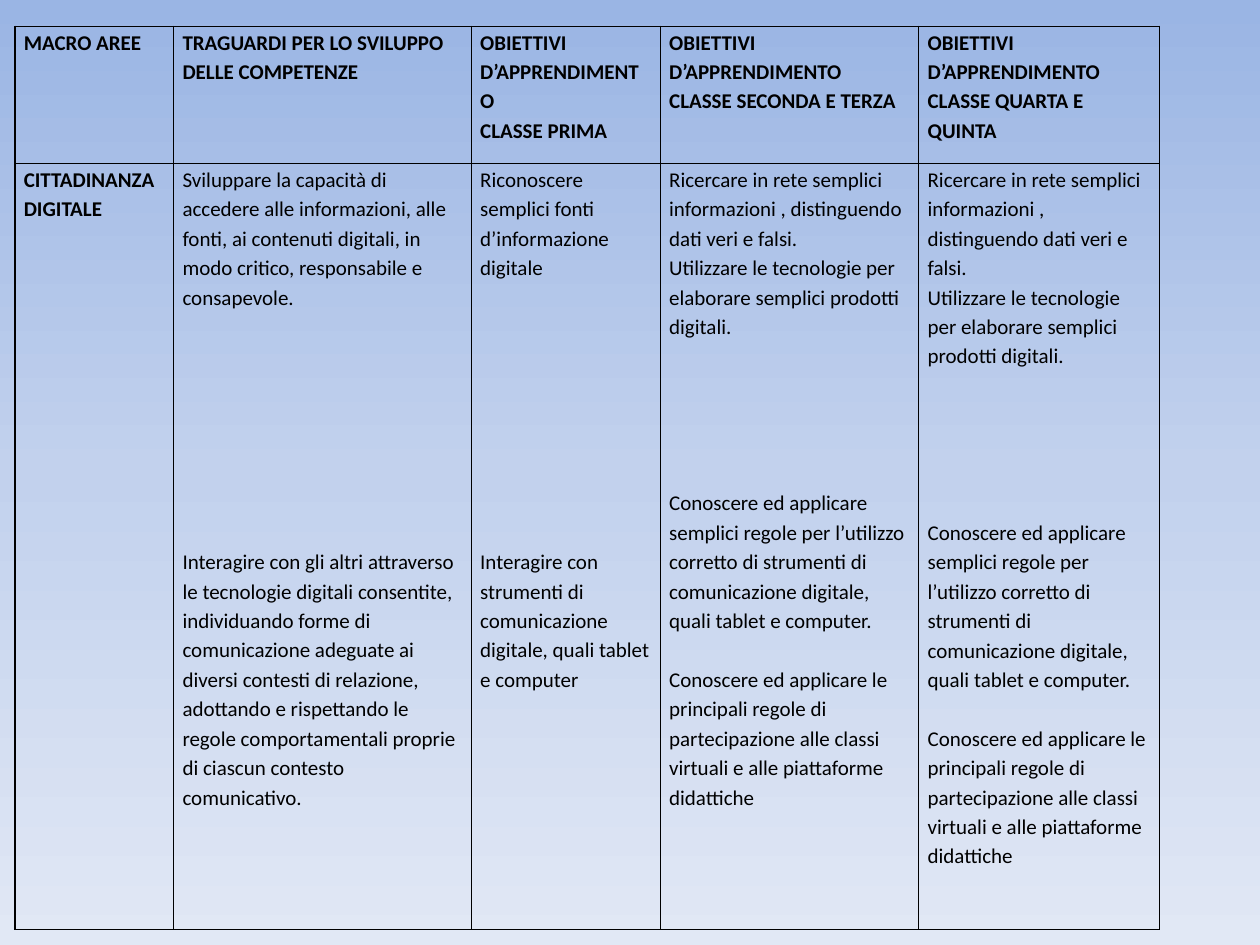
from copy import deepcopy

from lxml.etree import SubElement
from pptx import Presentation
from pptx.dml.color import RGBColor as RGB
from pptx.oxml.ns import qn
from pptx.util import Cm, Pt

BLACK = RGB(0x00, 0x00, 0x00)
GRADIENT = [
    (0, RGB(0x9A, 0xB5, 0xE4)),
    (0.5, RGB(0xC2, 0xD1, 0xED)),
    (1, RGB(0xE1, 0xE8, 0xF5)),
]
LINE = 16.8
COLS = [3.2, 6, 3.81, 5.21, 4.85]
ROWS = [2.77, 15.44]
MARGINS = {
    "margin_left": Cm(0.18),
    "margin_right": Cm(0.18),
    "margin_top": 0,
    "margin_bottom": 0,
}
FONT = {"name": "Calibri", "size": Pt(12)}

GOALS = "OBIETTIVI D’APPRENDIMENTO"
UPPER_CLASSES = [
    (0, "Ricercare in rete semplici informazioni , distinguendo dati veri e falsi."),
    (0, "Utilizzare le tecnologie per elaborare semplici prodotti digitali."),
    (5, "Conoscere ed applicare semplici regole per l’utilizzo corretto di strumenti "
        "di comunicazione digitale, quali tablet e computer."),
    (1, "Conoscere ed applicare le principali regole di partecipazione alle classi "
        "virtuali e alle piattaforme didattiche"),
]
CONTENT = [
    [
        [(0, "MACRO AREE")],
        [(0, "TRAGUARDI PER LO SVILUPPO"), (0, "DELLE COMPETENZE")],
        [(0, GOALS), (0, "CLASSE PRIMA")],
        [(0, GOALS), (0, "CLASSE SECONDA E TERZA")],
        [(0, GOALS), (0, "CLASSE QUARTA E QUINTA")],
    ],
    [
        [(0, "CITTADINANZA DIGITALE")],
        [
            (0, "Sviluppare la capacità di accedere alle informazioni, alle fonti, ai "
                "contenuti digitali, in modo critico, responsabile e consapevole."),
            (8, "Interagire con gli altri attraverso le tecnologie digitali consentite, "
                "individuando forme di comunicazione adeguate ai diversi contesti di "
                "relazione, adottando e rispettando le regole comportamentali proprie "
                "di ciascun contesto comunicativo."),
        ],
        [
            (0, "Riconoscere semplici fonti d’informazione digitale"),
            (9, "Interagire con strumenti di comunicazione digitale, quali tablet e "
                "computer"),
        ],
        UPPER_CLASSES,
        UPPER_CLASSES,
    ],
]


def add_borders(cell):
    tcPr = cell._tc.get_or_add_tcPr()
    for i, side in enumerate(("lnL", "lnR", "lnT", "lnB")):
        ln = SubElement(tcPr, qn(f"a:{side}"), w=str(Pt(1)))
        fill = SubElement(ln, qn("a:solidFill"))
        SubElement(fill, qn("a:srgbClr"), val=str(BLACK))
        tcPr.insert(i, ln)


prs = Presentation()
prs.slide_width, prs.slide_height = Cm(25.4), Cm(19.05)
s = prs.slides.add_slide(prs.slide_layouts[6])

bg = s.background.fill
bg.gradient()
bg.gradient_angle = 270
stops = s._element.find(".//" + qn("a:gsLst"))
stops.insert(1, deepcopy(stops[0]))
for stop, (position, color) in zip(bg.gradient_stops, GRADIENT):
    stop.position = position
    stop.color.rgb = color

table = s.shapes.add_table(
    len(ROWS), len(COLS), Cm(0.3), Cm(0.53), Cm(sum(COLS)), Cm(sum(ROWS))
).table
table.first_row = table.horz_banding = False
for col, width in zip(table.columns, COLS):
    col.width = Cm(width)
for row, height in zip(table.rows, ROWS):
    row.height = Cm(height)

for i, cells in enumerate(CONTENT):
    for j, paragraphs in enumerate(cells):
        cell = table.cell(i, j)
        for name, value in MARGINS.items():
            setattr(cell, name, value)
        cell.fill.background()
        add_borders(cell)
        tf = cell.text_frame
        for k, (gap, text) in enumerate(paragraphs):
            p = tf.add_paragraph() if k else tf.paragraphs[0]
            p.line_spacing = 1.15
            p.space_before = Pt(gap * LINE)
            r = p.add_run()
            r.text = text
            for name, value in FONT.items():
                setattr(r.font, name, value)
            r.font.bold = i == 0 or j == 0
            r.font.color.rgb = BLACK

prs.save("out.pptx")
